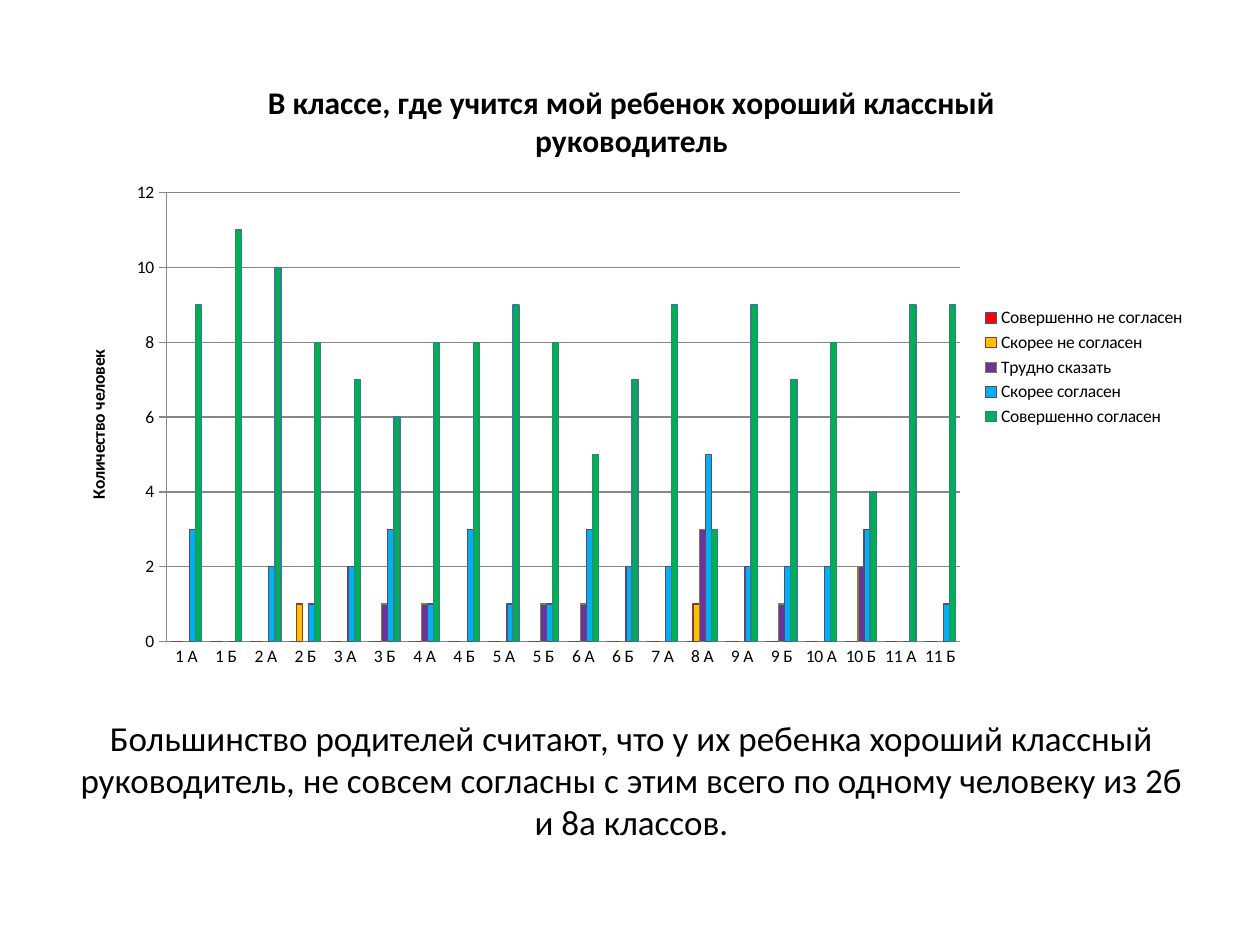
import pptx
import pptx.util
import pptx.chart.data
import pptx.dml.color
import pptx.enum.chart
import pptx.enum.text
import pptx.oxml
import pptx.oxml.ns
from pptx.util import Cm, Pt


def rgb(value):
    return pptx.dml.color.RGBColor.from_string(value)


def style_font(font, size, bold=False):
    font.name = "Calibri"
    font.size = Pt(size)
    font.bold = bold
    font.color.rgb = rgb("000000")


prs = pptx.Presentation()
prs.slide_width = Cm(25.4)
prs.slide_height = Cm(19.05)
s = prs.slides.add_slide(prs.slide_layouts[5])

sp = s.shapes.title
sp.left, sp.top, sp.width, sp.height = Cm(1.3), Cm(14.12), Cm(22.86), Cm(3.18)
tf = sp.text_frame
tf.text = (
    "Большинство родителей считают, что у их ребенка хороший классный "
    "руководитель, не совсем согласны с этим всего по одному человеку "
    "из 2б и 8а классов."
)
tf.word_wrap = True
tf.vertical_anchor = pptx.enum.text.MSO_ANCHOR.MIDDLE
p = tf.paragraphs[0]
p.alignment = pptx.enum.text.PP_ALIGN.CENTER
style_font(p.runs[0].font, 20)

classes = [
    "1 А", "1 Б", "2 А", "2 Б", "3 А", "3 Б", "4 А", "4 Б", "5 А", "5 Б",
    "6 А", "6 Б", "7 А", "8 А", "9 А", "9 Б", "10 А", "10 Б", "11 А", "11 Б",
]
answers = [
    ("Совершенно не согласен", "FF0000", "385D8A", [0] * len(classes)),
    ("Скорее не согласен", "FFC000", "8C3836",
     [0, 0, 0, 1, 0, 0, 0, 0, 0, 0, 0, 0, 0, 1, 0, 0, 0, 0, 0, 0]),
    ("Трудно сказать", "7030A0", "71893F",
     [0, 0, 0, 0, 0, 1, 1, 0, 0, 1, 1, 0, 0, 3, 0, 1, 0, 2, 0, 0]),
    ("Скорее согласен", "00B0F0", "5C4776",
     [3, 0, 2, 1, 2, 3, 1, 3, 1, 1, 3, 2, 2, 5, 2, 2, 2, 3, 0, 1]),
    ("Совершенно согласен", "00B050", "357D91",
     [9, 11, 10, 8, 7, 6, 8, 8, 9, 8, 5, 7, 9, 3, 9, 7, 8, 4, 9, 9]),
]
data = pptx.chart.data.CategoryChartData(number_format="General")
data.categories = classes
for name, fill, outline, values in answers:
    data.add_series(name, values)

chart = s.shapes.add_chart(
    pptx.enum.chart.XL_CHART_TYPE.COLUMN_CLUSTERED,
    Cm(1.3), Cm(1.12), Cm(22.86), Cm(12.57), data,
).chart
style_font(chart.font, 10)

plot = chart.plots[0]
plot.gap_width = 150
plot.overlap = 0
plot.vary_by_categories = False
for ser, (name, fill, outline, values) in zip(plot.series, answers):
    ser.invert_if_negative = False
    ser.format.fill.solid()
    ser.format.fill.fore_color.rgb = rgb(fill)
    ser.format.line.color.rgb = rgb(outline)
    ser.format.line.width = Pt(0.75)

cat_axis, val_axis = chart.category_axis, chart.value_axis
val_axis.minimum_scale = 0
val_axis.maximum_scale = 12
val_axis.major_unit = 2
val_axis.has_major_gridlines = True
cat_axis.major_tick_mark = pptx.enum.chart.XL_TICK_MARK.NONE
val_axis.major_tick_mark = pptx.enum.chart.XL_TICK_MARK.OUTSIDE
for part in (cat_axis, val_axis, val_axis.major_gridlines):
    part.format.line.color.rgb = rgb("878787")
    part.format.line.width = Pt(0.75)

chart.has_title = True
val_axis.has_title = True
for title, text, size in (
    (chart.chart_title, "В классе, где учится мой ребенок хороший классный руководитель", 18),
    (val_axis.axis_title, "Количество человек", 10),
):
    title.text_frame.text = text
    style_font(title.text_frame.paragraphs[0].runs[0].font, size, True)
chart.chart_title.include_in_layout = False

chart.has_legend = True
chart.legend.position = pptx.enum.chart.XL_LEGEND_POSITION.RIGHT
chart.legend.include_in_layout = False
style_font(chart.legend.font, 10)

area = chart._chartSpace.chart.plotArea
for old in area.findall(pptx.oxml.ns.qn("c:layout")):
    area.remove(old)
area.insert(0, pptx.oxml.parse_xml(
    f'<c:layout {pptx.oxml.ns.nsdecls("c")}><c:manualLayout>'
    '<c:layoutTarget val="inner"/><c:xMode val="edge"/><c:yMode val="edge"/>'
    '<c:x val="0.09"/><c:y val="0.22"/><c:w val="0.7"/><c:h val="0.72"/>'
    '</c:manualLayout></c:layout>'
))

prs.save("out.pptx")
